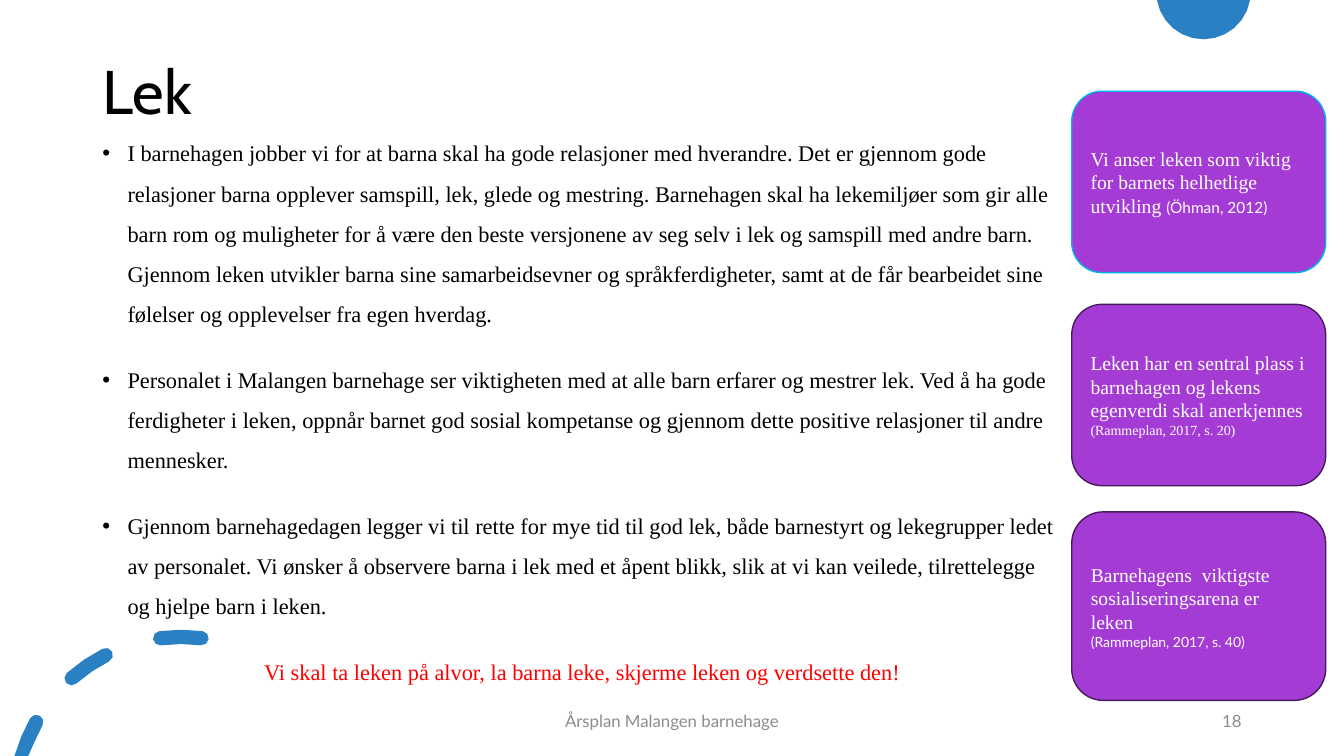
from dataclasses import dataclass
from math import cos, radians, sin

from lxml import etree
from pptx import Presentation
from pptx.dml.color import RGBColor
from pptx.enum.shapes import MSO_SHAPE
from pptx.enum.text import MSO_ANCHOR, PP_ALIGN
from pptx.oxml.ns import qn
from pptx.util import Cm, Pt

ROUNDED = MSO_SHAPE.ROUNDED_RECTANGLE
TOP, MIDDLE = MSO_ANCHOR.TOP, MSO_ANCHOR.MIDDLE
LEFT, CENTER, RIGHT = PP_ALIGN.LEFT, PP_ALIGN.CENTER, PP_ALIGN.RIGHT

COLORS = {
    "blue": "2980C3",
    "purple": "A43BD5",
    "dark purple": "481A5D",
    "cyan": "00B0F0",
    "black": "000000",
    "white": "FFFFFF",
    "red": "FF0000",
    "gray": "8C8C8C",
}
SERIF, SANS, TITLE_FONT = "Times New Roman", "Lato", "Cabin"
PAGE_WIDTH, PAGE_HEIGHT = 33.87, 19.05
UNITS_PER_CM = 1000  # outlines are drawn on a whole-number grid

Point = tuple[float, float]


@dataclass
class Span:
    text: str
    size: float
    font: str
    color: str


@dataclass
class Label:
    left: float
    top: float
    width: float
    height: float
    span: Span
    align: int = LEFT
    line_spacing: float = 1.0


@dataclass
class Card:
    top: float
    height: float
    border: str
    paragraphs: list[list[Span]]


def color(name: str) -> RGBColor:
    return RGBColor.from_string(COLORS[name])


def write(para, spans: list[Span], align: int = LEFT) -> None:
    para.alignment = align
    for span in spans:
        run = para.add_run()
        run.text = span.text
        run.font.size = Pt(span.size)
        run.font.name = span.font
        run.font.color.rgb = color(span.color)


def add_box(page, left: float, top: float, width: float, height: float, anchor: int):
    box = page.shapes.add_textbox(Cm(left), Cm(top), Cm(width), Cm(height))
    box.text_frame.word_wrap = True
    box.text_frame.vertical_anchor = anchor
    return box.text_frame


def add_label(page, label: Label) -> None:
    frame = add_box(page, label.left, label.top, label.width, label.height, MIDDLE)
    para = frame.paragraphs[0]
    para.line_spacing = label.line_spacing
    write(para, [label.span], label.align)


def add_bullet(para) -> None:
    properties = para._p.get_or_add_pPr()
    properties.set("marL", str(Cm(0.635)))
    properties.set("indent", str(-Cm(0.635)))
    etree.SubElement(properties, qn("a:buFont")).set("typeface", "Arial")
    etree.SubElement(properties, qn("a:buChar")).set("char", "•")


def add_body(page, bullets: list[str], motto: str) -> None:
    frame = add_box(page, 2.33, 3.05, 24.69, 15.32, TOP)
    for index, text in enumerate([*bullets, motto]):
        para = frame.add_paragraph() if index else frame.paragraphs[0]
        para.line_spacing = 1.5
        para.space_before, para.space_after = Pt(10), Pt(8)
        if text == motto:
            write(para, [Span(text, 16, SERIF, "red")], CENTER)
        else:
            add_bullet(para)
            write(para, [Span(text, 16, SERIF, "black")])


def add_card(page, card: Card) -> None:
    shape = page.shapes.add_shape(ROUNDED, Cm(27.01), Cm(card.top), Cm(6.4), Cm(card.height))
    shape.shadow.inherit = False
    shape.fill.solid()
    shape.fill.fore_color.rgb = color("purple")
    shape.line.color.rgb = color(card.border)
    shape.line.width = Pt(1)
    frame = shape.text_frame
    frame.word_wrap = True
    frame.vertical_anchor = MIDDLE
    for index, spans in enumerate(card.paragraphs):
        write(frame.add_paragraph() if index else frame.paragraphs[0], spans)


def arc(center: Point, radius: float, start: float, end: float, steps: int) -> list[Point]:
    """Points along an arc, in degrees clockwise from the top, kept on the page."""
    angles = [radians(start + (end - start) * i / steps) for i in range(steps + 1)]
    points = [(center[0] + radius * sin(a), center[1] - radius * cos(a)) for a in angles]
    return [(x, min(max(y, 0), PAGE_HEIGHT)) for x, y in points]


def dash(start: float, end: float) -> list[Point]:
    """Outline of a round-ended dash on the corner circle."""
    center, radius, half = (4.57, 20.24), 4.19, 0.18

    def cap(angle: float, turn: float) -> list[Point]:
        a = radians(angle)
        middle = (center[0] + radius * sin(a), center[1] - radius * cos(a))
        return arc(middle, half, angle + turn, angle + turn + 180, 4)[1:-1]

    return [
        *arc(center, radius + half, start, end, 2),
        *cap(end, 0),
        *arc(center, radius - half, end, start, 2),
        *cap(start, 180),
    ]


def add_outline(page, contours: list[list[Point]]) -> None:
    grid = [[(round(x * UNITS_PER_CM), round(y * UNITS_PER_CM)) for x, y in points] for points in contours]
    builder = page.shapes.build_freeform(*grid[0][0], scale=Cm(1) / UNITS_PER_CM)
    for index, points in enumerate(grid):
        if index:
            builder.move_to(*points[0])
        builder.add_line_segments(points[1:], close=True)
    shape = builder.convert_to_shape()
    shape.shadow.inherit = False
    shape.fill.solid()
    shape.fill.fore_color.rgb = color("blue")
    shape.line.fill.background()


BULLETS = [
    "I barnehagen jobber vi for at barna skal ha gode relasjoner med hverandre. Det er gjennom gode "
    "relasjoner barna opplever samspill, lek, glede og mestring. Barnehagen skal ha lekemiljøer som gir alle "
    "barn rom og muligheter for å være den beste versjonene av seg selv i lek og samspill med andre barn. "
    "Gjennom leken utvikler barna sine samarbeidsevner og språkferdigheter, samt at de får bearbeidet sine "
    "følelser og opplevelser fra egen hverdag.",
    "Personalet i Malangen barnehage ser viktigheten med at alle barn erfarer og mestrer lek. Ved å ha gode "
    "ferdigheter i leken, oppnår barnet god sosial kompetanse og gjennom dette positive relasjoner til andre "
    "mennesker.",
    "Gjennom barnehagedagen legger vi til rette for mye tid til god lek, både barnestyrt og lekegrupper ledet "
    "av personalet. Vi ønsker å observere barna i lek med et åpent blikk, slik at vi kan veilede, tilrettelegge "
    "og hjelpe barn i leken.",
]
MOTTO = "Vi skal ta leken på alvor, la barna leke, skjerme leken og verdsette den!"

LABELS = [
    Label(2.33, 1.02, 29.21, 2.74, Span("Lek", 44, TITLE_FONT, "black"), line_spacing=0.9),
    Label(11.22, 17.65, 11.43, 1.02, Span("Årsplan Malangen barnehage", 12, SANS, "gray"), CENTER),
    Label(23.92, 17.65, 7.62, 1.02, Span("18", 12, SANS, "gray"), RIGHT),
]

CARDS = [
    Card(2.3, 4.57, "cyan", [[
        Span("Vi anser leken som viktig for barnets helhetlige utvikling ", 14, SERIF, "white"),
        Span("(Öhman, 2012)", 11, SANS, "white"),
    ]]),
    Card(7.67, 4.57, "dark purple", [[
        Span("Leken har en sentral plass i barnehagen og lekens egenverdi skal anerkjennes ", 14, SERIF, "white"),
        Span("(Rammeplan, 2017, s. 20)", 10, SERIF, "white"),
    ]]),
    Card(12.9, 4.75, "dark purple", [
        [Span("Barnehagens  viktigste sosialiseringsarena er leken", 14, SERIF, "white")],
        [Span("(Rammeplan, 2017, s. 40)", 10, SANS, "white")],
    ]),
]


def main() -> None:
    deck = Presentation()
    deck.slide_width, deck.slide_height = Cm(PAGE_WIDTH), Cm(PAGE_HEIGHT)
    page = deck.slides.add_slide(deck.slide_layouts[6])

    # Blue decoration: circle at the top edge, dashes in the corner
    add_outline(page, [arc((30.33, -0.2), 1.19, 99.7, 260.3, 12)])
    add_outline(page, [dash(-74.1, -60.7), dash(-41.3, -27), dash(-7.3, 7)])

    # Title, footer and page number
    for label in LABELS:
        add_label(page, label)

    # Main text and quotation cards
    add_body(page, BULLETS, MOTTO)
    for card in CARDS:
        add_card(page, card)

    deck.save("out.pptx")


if __name__ == "__main__":
    main()
